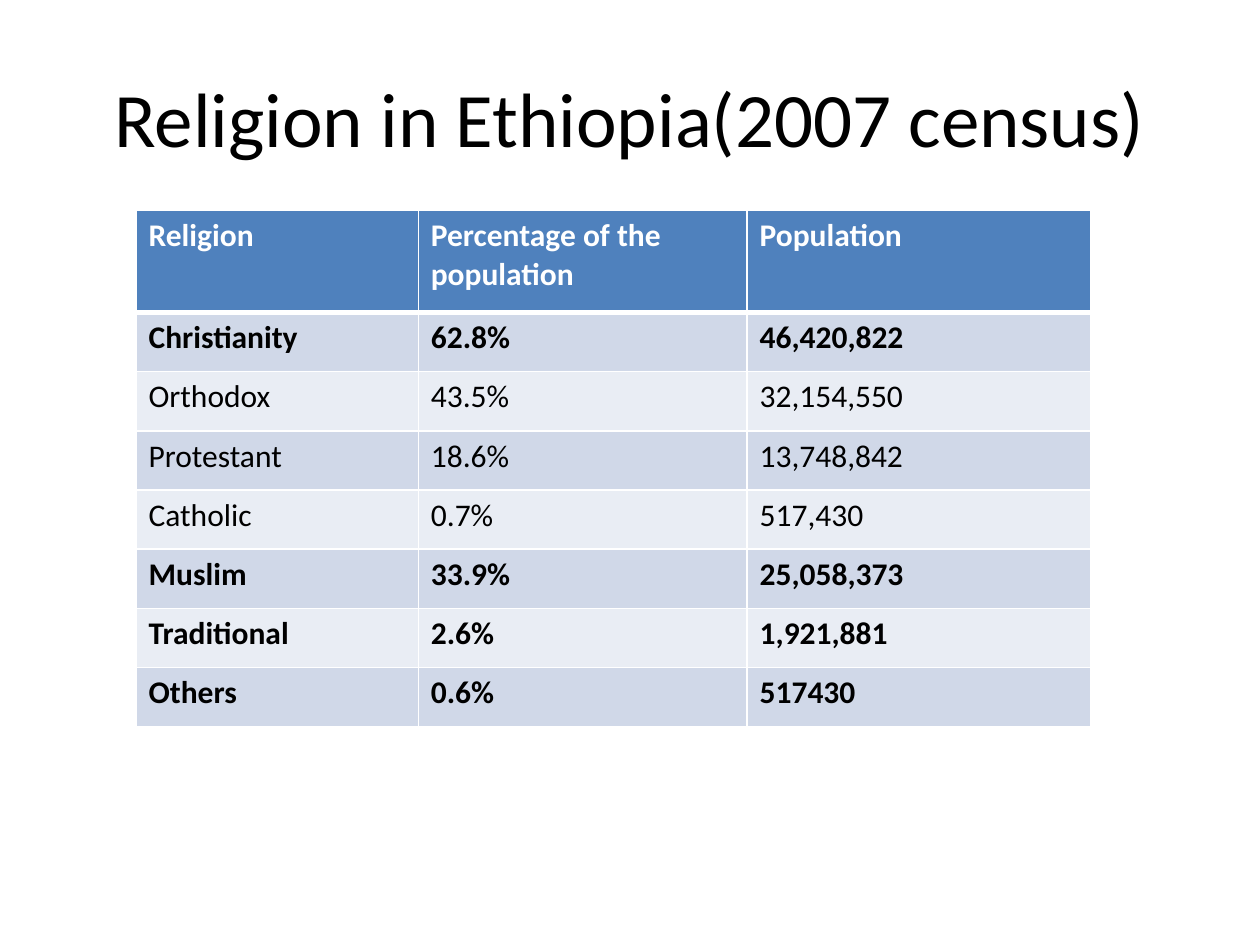
"""Build a slide with a table of religions in Ethiopia from the 2007 census."""
import lxml.etree
import pptx
import pptx.dml.color
import pptx.enum.text
import pptx.oxml.ns
import pptx.util

HEADING = "Religion in Ethiopia(2007 census)"
COLUMNS = ("Religion", "Percentage of the population", "Population")
GROUPS = [
    ("Christianity", "62.8%", "46,420,822", [
        ("Orthodox", "43.5%", "32,154,550"),
        ("Protestant", "18.6%", "13,748,842"),
        ("Catholic", "0.7%", "517,430"),
    ]),
    ("Muslim", "33.9%", "25,058,373", []),
    ("Traditional", "2.6%", "1,921,881", []),
    ("Others", "0.6%", "517430", []),
]

THEME = {
    "font": "Calibri",
    "heading_size": 44,
    "body_size": 18,
    "ink": "000000",
    "header_ink": "FFFFFF",
    "header_fill": "4F81BD",
    "bands": ("D0D8E8", "E9EDF4"),
    "rule": "FFFFFF",
    "rule_width": 1,
    "header_rule_width": 3,
}

SLIDE_WIDTH, SLIDE_HEIGHT = 10, 7.5
HEADING_AREA = (0.05, 0.04, 0.9, 1 / 6)
CENSUS_LEFT, CENSUS_TOP = 1.08, 1.67
COLUMN_WIDTHS = (2.24, 2.61, 2.73)
HEADER_HEIGHT, ROW_HEIGHT = 0.81, 0.47


def rgb(value):
    return pptx.dml.color.RGBColor.from_string(value)


def write(frame, words, size, ink, bold=False):
    run = frame.paragraphs[0].add_run()
    run.text = words
    style = {"name": THEME["font"], "size": pptx.util.Pt(size), "bold": bold}
    for attribute, value in style.items():
        setattr(run.font, attribute, value)
    run.font.color.rgb = rgb(ink)


def rule_cell(cell, widths):
    qn = pptx.oxml.ns.qn
    properties = cell._tc.get_or_add_tcPr()
    for position, (side, width) in enumerate(widths.items()):
        line = lxml.etree.Element(qn(f"a:ln{side}"), w=str(pptx.util.Pt(width)))
        paint = lxml.etree.SubElement(line, qn("a:solidFill"))
        lxml.etree.SubElement(paint, qn("a:srgbClr"), val=THEME["rule"])
        properties.insert(position, line)


def add_heading(slide):
    extents = (SLIDE_WIDTH, SLIDE_HEIGHT) * 2
    area = [pptx.util.Inches(share * extent)
            for share, extent in zip(HEADING_AREA, extents)]
    frame = slide.shapes.add_textbox(*area).text_frame
    layout = {"word_wrap": True,
              "vertical_anchor": pptx.enum.text.MSO_ANCHOR.MIDDLE}
    for attribute, value in layout.items():
        setattr(frame, attribute, value)
    frame.paragraphs[0].alignment = pptx.enum.text.PP_ALIGN.CENTER
    write(frame, HEADING, THEME["heading_size"], THEME["ink"])


def census_rows():
    yield COLUMNS, True
    for *totals, branches in GROUPS:
        yield totals, True
        for branch in branches:
            yield branch, False


def add_census(slide):
    rows = list(census_rows())
    heights = [HEADER_HEIGHT] + [ROW_HEIGHT] * (len(rows) - 1)
    area = (CENSUS_LEFT, CENSUS_TOP, sum(COLUMN_WIDTHS), sum(heights))
    census = slide.shapes.add_table(
        len(rows), len(COLUMNS), *map(pptx.util.Inches, area)).table
    for column, width in zip(census.columns, COLUMN_WIDTHS):
        column.width = pptx.util.Inches(width)

    for index, (entries, bold) in enumerate(rows):
        census.rows[index].height = pptx.util.Inches(heights[index])
        header = index == 0
        fill = THEME["header_fill"] if header else THEME["bands"][(index - 1) % 2]
        ink = THEME["header_ink"] if header else THEME["ink"]
        widths = dict.fromkeys("LRTB", THEME["rule_width"])
        if header:
            widths["B"] = THEME["header_rule_width"]
        elif index == 1:
            widths["T"] = THEME["header_rule_width"]
        for cell, words in zip(census.rows[index].cells, entries):
            cell.fill.solid()
            cell.fill.fore_color.rgb = rgb(fill)
            rule_cell(cell, widths)
            write(cell.text_frame, words, THEME["body_size"], ink, bold)


def main():
    deck = pptx.Presentation()
    deck.slide_width = pptx.util.Inches(SLIDE_WIDTH)
    deck.slide_height = pptx.util.Inches(SLIDE_HEIGHT)
    slide = deck.slides.add_slide(deck.slide_layouts[6])
    add_heading(slide)
    add_census(slide)
    deck.save("out.pptx")


if __name__ == "__main__":
    main()
